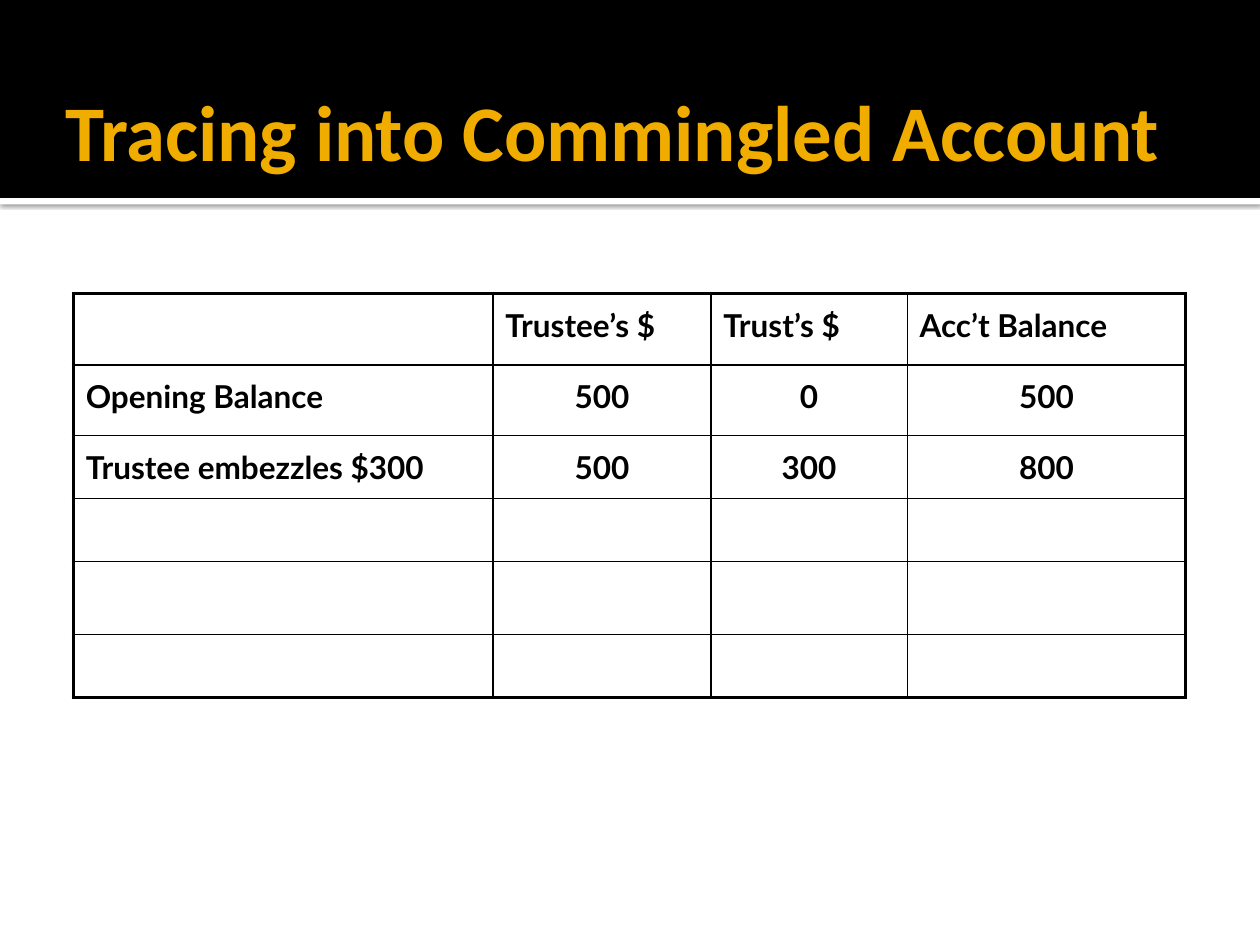
from lxml import etree
from pptx import Presentation
from pptx.dml.color import RGBColor
from pptx.enum import shapes, text
from pptx.oxml import ns
from pptx.util import Cm, Pt

COLORS = {"band": "000000", "rule": "FFFFFF", "title": "F0AD00", "ink": "000000"}
COLUMN_WIDTHS = [8.46, 4.39, 3.96, 5.61]
ROW_HEIGHTS = [1.44, 1.42, 1.27, 1.27, 1.47, 1.27]
ROWS = [
    ["", "Trustee’s $", "Trust’s $", "Acc’t Balance"],
    ["Opening Balance", "500", "0", "500"],
    ["Trustee embezzles $300", "500", "300", "800"],
]


def color(name):
    return RGBColor.from_string(COLORS[name])


def write(frame, content, *, size, font, fill, align=text.PP_ALIGN.LEFT):
    paragraph = frame.paragraphs[0]
    paragraph.alignment = align
    run = paragraph.add_run()
    run.text = content
    run.font.size = Pt(size)
    run.font.name = font
    run.font.bold = True
    run.font.color.rgb = color(fill)


def add_band(slide, left, top, width, height, fill):
    shape = slide.shapes.add_shape(
        shapes.MSO_SHAPE.RECTANGLE, Cm(left), Cm(top), Cm(width), Cm(height))
    shape.shadow.inherit = False
    shape.fill.solid()
    shape.fill.fore_color.rgb = color(fill)
    shape.line.fill.background()
    return shape


def add_drop_shadow(shape, blur, distance, opacity):
    effects = shape._element.spPr.find(ns.qn("a:effectLst"))
    shadow = etree.SubElement(
        effects, ns.qn("a:outerShdw"), blurRad=str(Pt(blur)),
        dist=str(Pt(distance)), dir="5400000", algn="t", rotWithShape="0")
    shade = etree.SubElement(shadow, ns.qn("a:srgbClr"), val=COLORS["ink"])
    etree.SubElement(shade, ns.qn("a:alpha"), val=str(opacity * 1000))


def add_header(slide, left, top, width, height):
    rule = add_band(slide, left, top + height, width, 0.13, "rule")
    add_drop_shadow(rule, blur=2.5, distance=0.8, opacity=60)
    add_band(slide, left, top, width, height, "band")
    title = slide.shapes.add_textbox(
        Cm(left + 1.07), Cm(top + 0.58), Cm(width - 1.63), Cm(height + 0.08))
    frame = title.text_frame
    frame.word_wrap = True
    frame.vertical_anchor = text.MSO_ANCHOR.MIDDLE
    frame.margin_left = Cm(0.25)
    frame.margin_right = frame.margin_top = frame.margin_bottom = Cm(0.13)
    write(frame, "Tracing into Commingled Account", size=45, font="Calibri", fill="title")


def set_borders(cell, widths):
    properties = cell._tc.get_or_add_tcPr()
    for side, width in widths.items():
        line = etree.SubElement(properties, ns.qn(f"a:ln{side}"), w=str(Pt(width)))
        fill = etree.SubElement(line, ns.qn("a:solidFill"))
        etree.SubElement(fill, ns.qn("a:srgbClr"), val=COLORS["ink"])


def add_balance_table(slide, left, top, width, height):
    last_row, last_column = len(ROW_HEIGHTS) - 1, len(COLUMN_WIDTHS) - 1
    table = slide.shapes.add_table(
        last_row + 1, last_column + 1, Cm(left), Cm(top), Cm(width), Cm(height)).table
    table.first_row = table.horz_banding = False
    for column, column_width in zip(table.columns, COLUMN_WIDTHS):
        column.width = Cm(column_width)
    for row_index, row_height in enumerate(ROW_HEIGHTS):
        table.rows[row_index].height = Cm(row_height)
        for column_index in range(last_column + 1):
            cell = table.cell(row_index, column_index)
            outer = {"L": column_index == 0, "R": column_index == last_column,
                     "T": row_index == 0, "B": row_index == last_row}
            set_borders(cell, {side: 2.25 if edge else 1 for side, edge in outer.items()})
            cell.fill.background()
            cell.margin_left = cell.margin_right = Cm(0.25)
            cell.margin_top, cell.margin_bottom = Cm(0.25), Cm(0.13)
            if row_index < len(ROWS) and ROWS[row_index][column_index]:
                is_number = row_index > 0 and column_index > 0
                write(cell.text_frame, ROWS[row_index][column_index],
                      size=18, font="Lato", fill="ink",
                      align=text.PP_ALIGN.CENTER if is_number else text.PP_ALIGN.LEFT)


def main():
    presentation = Presentation()
    presentation.slide_width, presentation.slide_height = Cm(25.4), Cm(19.05)
    slide = presentation.slides.add_slide(presentation.slide_layouts[6])
    add_header(slide, 0, 0, 25.4, 3.99)
    add_balance_table(slide, 1.48, 5.92, sum(COLUMN_WIDTHS), sum(ROW_HEIGHTS))
    presentation.save("out.pptx")


if __name__ == "__main__":
    main()
